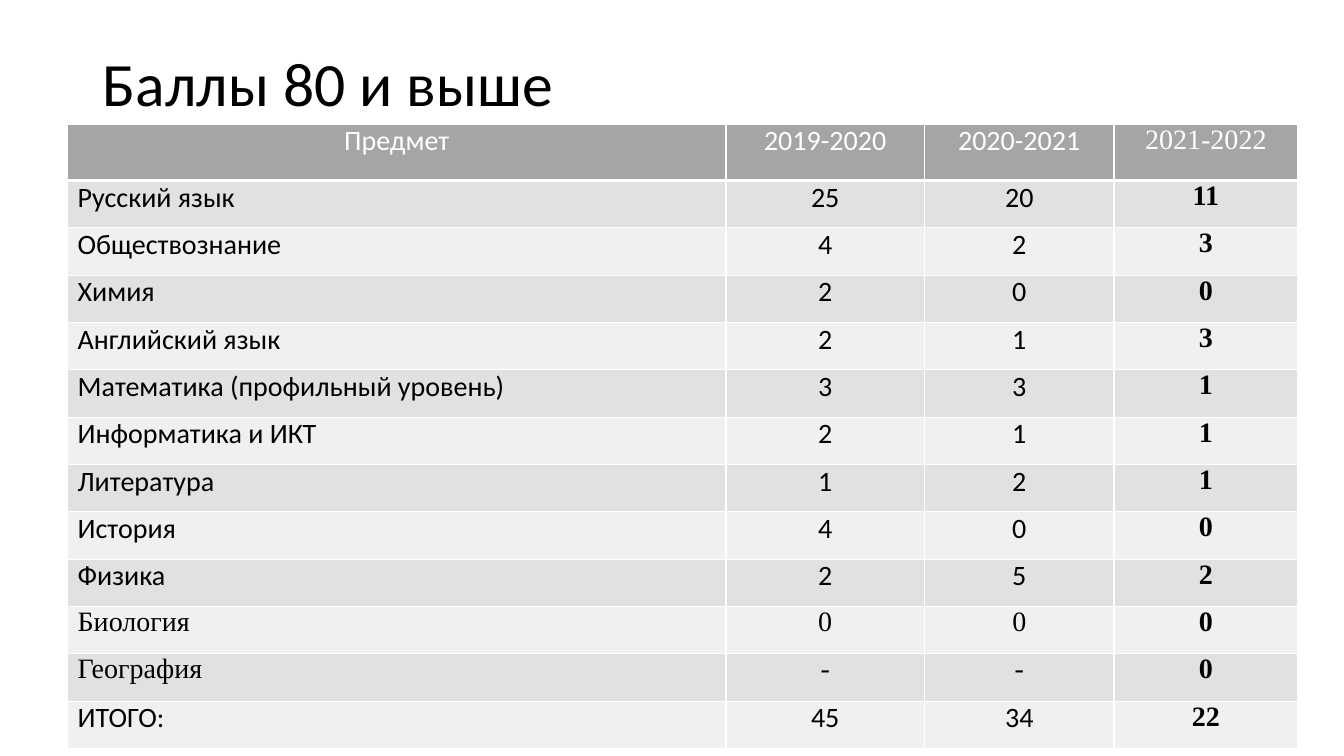
import pptx
import pptx.util
import pptx.dml.color
import pptx.enum.text
import pptx.oxml
import pptx.oxml.ns

BLACK = pptx.dml.color.RGBColor(0x00, 0x00, 0x00)
WHITE = pptx.dml.color.RGBColor(0xFF, 0xFF, 0xFF)
HEADER_GRAY = pptx.dml.color.RGBColor(0xA5, 0xA5, 0xA5)
BAND_GRAYS = (
    pptx.dml.color.RGBColor(0xE1, 0xE1, 0xE1),
    pptx.dml.color.RGBColor(0xF0, 0xF0, 0xF0),
)
SANS, SERIF = "Calibri", "Times New Roman"

SLIDE_WIDTH, SLIDE_HEIGHT = 13.33, 7.5
TITLE_BOX = (0.92, 0.4, 11.5, 0.92)
TABLE_LEFT, TABLE_TOP = 0.67, 1.23
COLUMN_WIDTHS = (6.53, 1.97, 1.88, 1.82)
HEADER_HEIGHT, ROW_HEIGHT = 0.56, 0.47

SCORES = (
    ("Предмет", "2019-2020", "2020-2021", "2021-2022"),
    ("Русский язык", "25", "20", "11"),
    ("Обществознание", "4", "2", "3"),
    ("Химия", "2", "0", "0"),
    ("Английский язык", "2", "1", "3"),
    ("Математика (профильный уровень)", "3", "3", "1"),
    ("Информатика и ИКТ", "2", "1", "1"),
    ("Литература", "1", "2", "1"),
    ("История", "4", "0", "0"),
    ("Физика", "2", "5", "2"),
    ("Биология", "0", "0", "0"),
    ("География", "-", "-", "0"),
    ("ИТОГО:", "45", "34", "22"),
)
SERIF_SUBJECTS = ("Биология", "География")


def add_span(para, text, size, font, color, bold=False):
    span = para.add_run()
    span.text = text
    span.font.size = pptx.util.Pt(size)
    span.font.name = font
    span.font.bold = bold
    span.font.color.rgb = color


def add_title(page, text):
    title = page.shapes.title
    title.left, title.top, title.width, title.height = map(pptx.util.Inches, TITLE_BOX)
    title.text_frame.vertical_anchor = pptx.enum.text.MSO_ANCHOR.MIDDLE
    para = title.text_frame.paragraphs[0]
    para.alignment = pptx.enum.text.PP_ALIGN.LEFT
    para.line_spacing = 0.9
    add_span(para, text, 44, SANS, BLACK)


def set_borders(cell, bottom_points):
    properties = cell._tc.get_or_add_tcPr()
    for side, points in (("L", 1), ("R", 1), ("T", 1), ("B", bottom_points)):
        properties.append(pptx.oxml.parse_xml(
            f'<a:ln{side} {pptx.oxml.ns.nsdecls("a")} w="{pptx.util.Pt(points)}">'
            f'<a:solidFill><a:srgbClr val="{WHITE}"/></a:solidFill></a:ln{side}>'
        ))


def fill_cell(cell, text, row, column, subject):
    is_header = row == 0
    is_latest = column == len(COLUMN_WIDTHS) - 1
    # Borders come before the fill in the cell properties
    set_borders(cell, 3 if is_header else 1)
    cell.fill.solid()
    cell.fill.fore_color.rgb = HEADER_GRAY if is_header else BAND_GRAYS[(row - 1) % 2]
    cell.margin_left = cell.margin_right = pptx.util.Inches(0.1)
    cell.margin_top = cell.margin_bottom = 0
    para = cell.text_frame.paragraphs[0]
    if is_header or column > 0:
        para.alignment = pptx.enum.text.PP_ALIGN.CENTER
    font = SERIF if is_latest or subject in SERIF_SUBJECTS else SANS
    add_span(para, text, 20, font, WHITE if is_header else BLACK,
             bold=is_latest and not is_header)


def add_score_table(page):
    heights = [HEADER_HEIGHT] + [ROW_HEIGHT] * (len(SCORES) - 1)
    frame = page.shapes.add_table(
        len(SCORES), len(COLUMN_WIDTHS),
        pptx.util.Inches(TABLE_LEFT), pptx.util.Inches(TABLE_TOP),
        pptx.util.Inches(sum(COLUMN_WIDTHS)), pptx.util.Inches(sum(heights)),
    )
    table = frame.table
    table.horz_banding = False
    for column, width in zip(table.columns, COLUMN_WIDTHS):
        column.width = pptx.util.Inches(width)
    for row, height in zip(table.rows, heights):
        row.height = pptx.util.Inches(height)
    for row, values in enumerate(SCORES):
        for column, text in enumerate(values):
            fill_cell(table.cell(row, column), text, row, column, values[0])


def main():
    deck = pptx.Presentation()
    deck.slide_width = pptx.util.Inches(SLIDE_WIDTH)
    deck.slide_height = pptx.util.Inches(SLIDE_HEIGHT)
    page = deck.slides.add_slide(deck.slide_layouts.get_by_name("Title Only"))
    add_title(page, "Баллы 80 и выше")
    add_score_table(page)
    deck.save("out.pptx")


if __name__ == "__main__":
    main()
